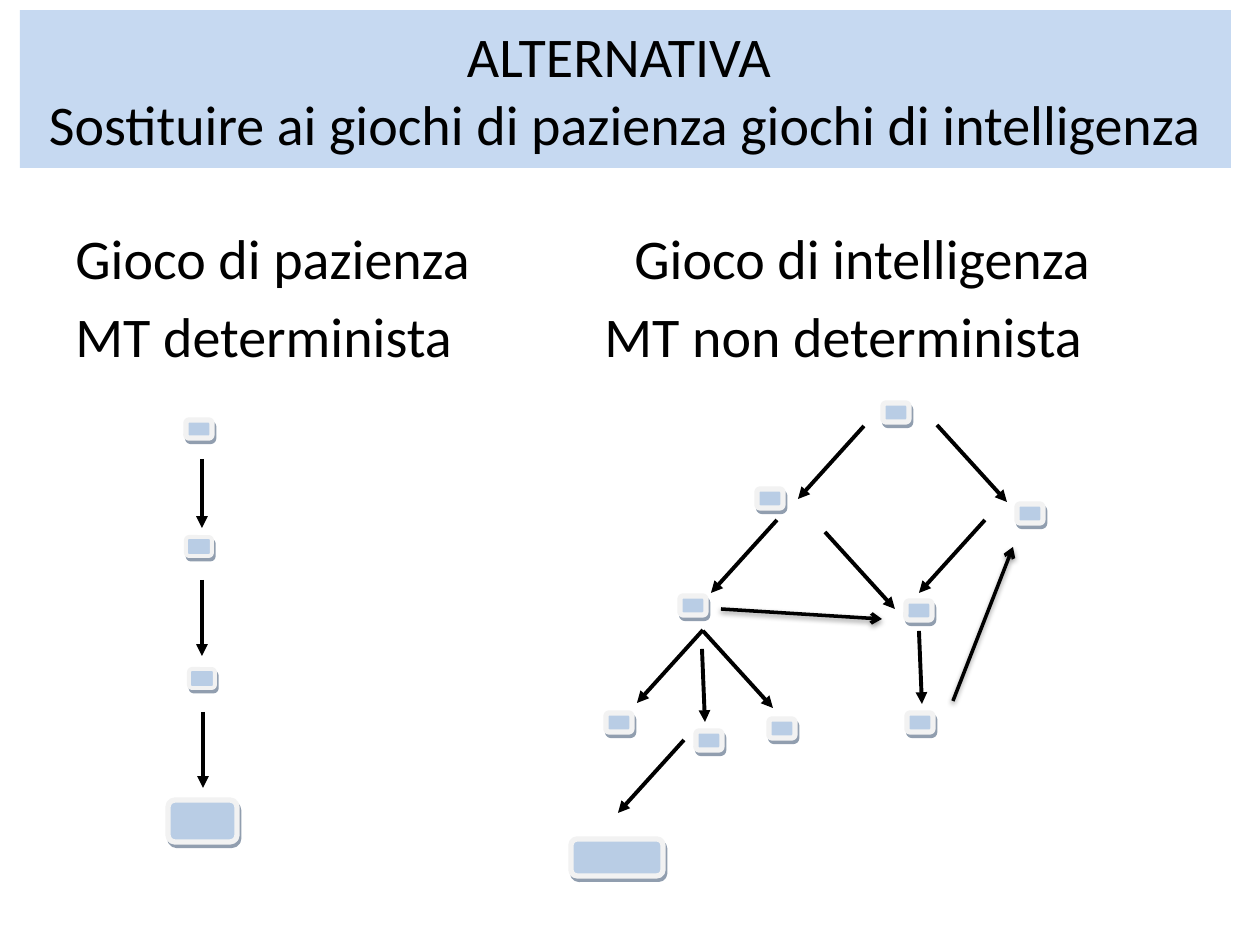
"""Build the slide comparing a deterministic game with a non-deterministic one."""
from lxml import etree
from pptx import Presentation
from pptx.dml.color import RGBColor
from pptx.enum.shapes import MSO_CONNECTOR, MSO_SHAPE
from pptx.enum.text import MSO_ANCHOR, PP_ALIGN
from pptx.oxml.ns import qn
from pptx.util import Pt

PX = 7257
RECTANGLE, ROUNDED = MSO_SHAPE.RECTANGLE, MSO_SHAPE.ROUNDED_RECTANGLE
STRAIGHT = MSO_CONNECTOR.STRAIGHT
LEFT, CENTER = PP_ALIGN.LEFT, PP_ALIGN.CENTER
TOP, MIDDLE = MSO_ANCHOR.TOP, MSO_ANCHOR.MIDDLE
THEME = {
    "font": "Calibri", "size": 32, "ink": "000000", "banner": "C6D9F1",
    "node": "B9CDE5", "border": "F2F2F2", "node_shadow": "243F60",
}


def write(box, lines, align=LEFT, anchor=TOP, before=0, tabs=()):
    frame = box.text_frame
    frame.word_wrap = True
    frame.vertical_anchor = anchor
    for index, text in enumerate(lines):
        para = frame.paragraphs[0] if index == 0 else frame.add_paragraph()
        para.text = text
        para.alignment = align
        para.space_before = Pt(before)
        for span in para.runs:
            span.font.name = THEME["font"]
            span.font.size = Pt(THEME["size"])
            span.font.color.rgb = RGBColor.from_string(THEME["ink"])
        if tabs:
            tab_list = etree.SubElement(para._p.get_or_add_pPr(), qn("a:tabLst"))
            etree.SubElement(tab_list, qn("a:tab"), pos=str(tabs[index] * PX), algn="l")


def cast_shadow(effects, color, opacity, blur, distance, angle):
    shadow = etree.SubElement(
        effects, qn("a:outerShdw"), blurRad=str(Pt(blur)), dist=str(Pt(distance)),
        dir=str(angle * 60000), algn="ctr", rotWithShape="0")
    tone = etree.SubElement(shadow, qn("a:srgbClr"), val=color)
    etree.SubElement(tone, qn("a:alpha"), val=str(opacity * 1000))


deck = Presentation()
deck.slide_width, deck.slide_height = 1260 * PX, 945 * PX
page = deck.slides.add_slide(deck.slide_layouts[6])

banner = page.shapes.add_shape(RECTANGLE, 20 * PX, 10 * PX, 1211 * PX, 158 * PX)
banner.shadow.inherit = False
banner.fill.solid()
banner.fill.fore_color.rgb = RGBColor.from_string(THEME["banner"])
banner.line.fill.background()
write(banner, ["ALTERNATIVA \vSostituire ai giochi di pazienza giochi di intelligenza"],
      align=CENTER, anchor=MIDDLE)

headings = page.shapes.add_textbox(63 * PX, 217 * PX, 1099 * PX, 160 * PX)
write(headings, ["Gioco di pazienza\tGioco di intelligenza",
                 "MT determinista\tMT non determinista"], before=6.4, tabs=(559, 529))

chain_arrows = [(202, 459, 0, 69), (202, 580, 0, 76), (203, 712, 0, 76)]
branches = {
    (-66, 73): [(864, 426), (777, 520), (703, 630), (684, 740), (985, 520)],
    (70, 77): [(703, 631), (825, 532), (937, 425)],
    (3, 73): [(919, 631), (702, 649)],
}
tree_arrows = [(*start, *step) for step, starts in branches.items() for start in starts]
cross_arrows = [(953, 701, 60, -154), (721, 609, 161, 10)]

for x, y, across, down in chain_arrows + tree_arrows + cross_arrows:
    is_cross = (x, y, across, down) in cross_arrows
    arrow = page.shapes.add_connector(
        STRAIGHT, x * PX, y * PX, (x + across) * PX, (y + down) * PX)
    arrow.line.color.rgb = RGBColor.from_string(THEME["ink"])
    arrow.line.width = Pt(2 if is_cross else 2.25)
    properties = arrow._element.spPr
    etree.SubElement(properties.find(qn("a:ln")), qn("a:tailEnd"),
                     type="arrow" if is_cross else "triangle")
    effects = etree.SubElement(properties, qn("a:effectLst"))
    if is_cross:
        cast_shadow(effects, THEME["ink"], 38, 3.1, 1.6, 90)

chain_nodes = [(186, 420, 26, 18, 3), (186, 537, 26, 19, 2.25),
               (189, 669, 26, 19, 2.25), (168, 800, 69, 42, 3)]
tree_places = [(883, 403), (757, 489), (906, 601), (1017, 504), (680, 596),
               (907, 713), (769, 719), (696, 731), (606, 713)]
tree_nodes = [(x, y, 26, 19, 3) for x, y in tree_places] + [(571, 839, 92, 37, 3)]

for x, y, width, height, border in chain_nodes + tree_nodes:
    node = page.shapes.add_shape(ROUNDED, x * PX, y * PX, width * PX, height * PX)
    node.fill.solid()
    node.fill.fore_color.rgb = RGBColor.from_string(THEME["node"])
    node.line.color.rgb = RGBColor.from_string(THEME["border"])
    node.line.width = Pt(border)
    node.shadow.inherit = False
    effects = node._element.spPr.find(qn("a:effectLst"))
    cast_shadow(effects, THEME["node_shadow"], 50, 0, 2.2, 63)

deck.save("out.pptx")
